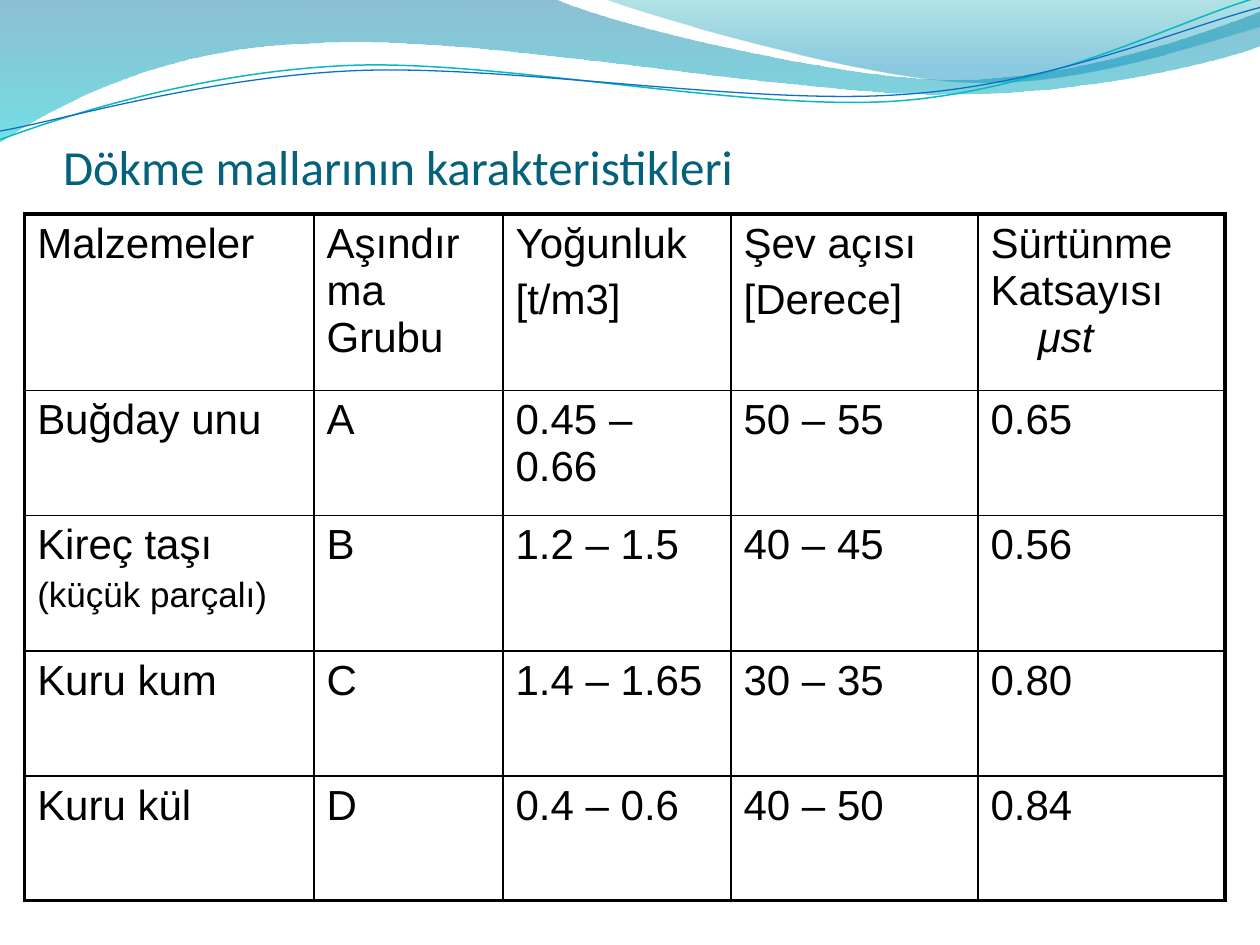
import dataclasses

import lxml.etree
import pptx
import pptx.dml.color
import pptx.enum.text
import pptx.oxml.ns
import pptx.util

Pt = pptx.util.Pt
qn = pptx.oxml.ns.qn


@dataclasses.dataclass(frozen=True)
class Theme:
    heading_font: str = "Calibri"
    body_font: str = "Arial"
    title_size: int = 28
    body_size: int = 24
    note_size: int = 20
    title: str = "04617B"
    ink: str = "000000"
    wave_lines: tuple = (("0AB8BF", 0.85), ("0F6FC6", 0.75))
    # Each stop: position, colour, opacity in percent
    wave_fills: tuple = (
        ((0, "0074A1", 45), (1, "00C6CF", 55)),
        ((0, "00A1A9", 30), (0.8, "008BBF", 45)),
    )


theme = Theme()
rgb = pptx.dml.color.RGBColor.from_string


def write(para, text, font=theme.body_font, size=theme.body_size,
          color=theme.ink, italic=False, before=0):
    """Add formatted text to a paragraph."""
    para.space_before = Pt(before)
    span = para.add_run()
    span.text = text
    span.font.name = font
    span.font.size = Pt(size)
    span.font.bold = False
    span.font.italic = italic
    span.font.color.rgb = rgb(color)


def draw_path(page, start, steps, close):
    """Draw lines (x, y) and Bezier curves (two controls and an end)."""
    builder = page.shapes.build_freeform(Pt(start[0]), Pt(start[1]))
    builder.add_line_segments([(Pt(x), Pt(y)) for *_, x, y in steps], close=close)
    shape = builder.convert_to_shape()
    shape.shadow.inherit = False
    # Turn the straight segments of curved steps into Bezier curves
    segments = list(shape._element.iter(qn("a:lnTo")))
    for segment, step in zip(segments, steps):
        if len(step) == 6:
            segment.tag = qn("a:cubicBezTo")
            for i, (x, y) in enumerate((step[:2], step[2:4])):
                control = lxml.etree.Element(
                    qn("a:pt"), x=str(Pt(x) - shape.left), y=str(Pt(y) - shape.top))
                segment.insert(i, control)
    return shape


deck = pptx.Presentation()
deck.slide_width, deck.slide_height = Pt(720), Pt(540)
page = deck.slides.add_slide(deck.slide_layouts[5])

# Filled waves along the top
wave_bands = [
    ((0, 0), [(316.8, -0.7),
              (342.7, 12.2, 478.1, 45.4, 545.8, 45.4),
              (614.2, 45.4, 689.8, 18.7, 720, 6.5),
              (720.7, 25.9),
              (707.8, 31.7, 626.4, 54.7, 537.1, 54),
              (447.8, 54, 275, 20.2, 185, 24.5),
              (92.9, 25.9, 33.1, 59.8, -0.7, 81.4)]),
    ((344.9, -0.7), [(366.5, 7.9, 491, 44.6, 553.7, 46.8),
                     (616.3, 49.7, 691.9, 23, 720, 15.1),
                     (720, 0)]),
]
for (start, steps), stops in zip(wave_bands, theme.wave_fills):
    band = draw_path(page, start, steps, close=True)
    band.line.fill.background()
    band.fill.gradient()
    band.fill.gradient_angle = 270
    for stop, (position, color, _) in zip(band.fill.gradient_stops, stops):
        stop.position = position
        stop.color.rgb = rgb(color)
    colors = list(band._element.spPr.iter(qn("a:srgbClr")))
    for node, (_, _, opacity) in zip(colors, stops):
        lxml.etree.SubElement(node, qn("a:alpha"), val=str(opacity * 1000))

# Thin wave lines, slightly turned
wave_curves = [
    ((-1.4, 62.9), [(33.7, 51.6, 114, 29.4, 199.8, 29.9),
                    (284.8, 30.3, 425.8, 67.2, 512.4, 64.9),
                    (599, 62.4, 676.4, 25.7, 720, 15.6)]),
    ((-1.2, 57.9), [(33, 53.7, 118.3, 32.5, 204, 33),
                    (290.5, 33.5, 428.9, 63.8, 515.5, 61.3),
                    (601.3, 59.7, 678.5, 30.1, 721.4, 21.3)]),
]
for (start, steps), (color, width) in zip(wave_curves, theme.wave_lines):
    curve = draw_path(page, start, steps, close=False)
    curve.rotation = 357.3
    curve.fill.background()
    curve.line.color.rgb = rgb(color)
    curve.line.width = Pt(width)

# Title, in front of the waves
title = page.shapes.title
page.shapes._spTree.append(title._element)
title.left, title.top, title.width, title.height = Pt(36), Pt(21.6), Pt(648), Pt(90)
frame = title.text_frame
frame.margin_left = frame.margin_right = frame.margin_bottom = 0
frame.margin_top = Pt(3.6)
frame.word_wrap = True
frame.auto_size = pptx.enum.text.MSO_AUTO_SIZE.NONE
frame.vertical_anchor = pptx.enum.text.MSO_ANCHOR.BOTTOM
frame.paragraphs[0].alignment = pptx.enum.text.PP_ALIGN.LEFT
write(frame.paragraphs[0], "Dökme mallarının karakteristikleri",
      font=theme.heading_font, size=theme.title_size, color=theme.title)

# Table of materials; a line break in a cell starts a new paragraph
rows = [
    ("Malzemeler", "Aşındırma Grubu", "Yoğunluk\n[t/m3]", "Şev açısı\n[Derece]",
     "Sürtünme Katsayısı\nμst"),
    ("Buğday unu", "A", "0.45 – 0.66", "50 – 55", "0.65"),
    ("Kireç taşı\n(küçük parçalı)", "B", "1.2 – 1.5", "40 – 45", "0.56"),
    ("Kuru kum", "C", "1.4 – 1.65", "30 – 35", "0.80"),
    ("Kuru kül", "D", "0.4 – 0.6", "40 – 50", "0.84"),
]
special_formats = {
    "μst": dict(italic=True),
    "(küçük parçalı)": dict(size=theme.note_size, before=4),
}
column_widths = [165.4, 108, 130.3, 141.1, 141.1]
row_heights = [100.8, 71.3, 77.6, 71.3, 71.3]
table = page.shapes.add_table(
    len(rows), len(column_widths), Pt(14.1), Pt(122.4),
    Pt(sum(column_widths)), Pt(sum(row_heights))).table
table.first_row = table.horz_banding = False
for column, width in zip(table.columns, column_widths):
    column.width = Pt(width)
for row, height in zip(table.rows, row_heights):
    row.height = Pt(height)

for r, texts in enumerate(rows):
    for c, text in enumerate(texts):
        cell = table.cell(r, c)
        frame = cell.text_frame
        for i, line in enumerate(text.split("\n")):
            para = frame.add_paragraph() if i else frame.paragraphs[0]
            if line == "μst":
                para._p.get_or_add_pPr().set("marL", str(Pt(27)))
            write(para, line, **special_formats.get(line, dict(before=5.3 if i else 0)))

        # Heavy outer frame, thin inner rules
        outer_sides = {"L": c == 0, "R": c == len(texts) - 1,
                       "T": r == 0, "B": r == len(rows) - 1}
        properties = cell._tc.get_or_add_tcPr()
        for side, outer in outer_sides.items():
            border = lxml.etree.SubElement(
                properties, qn(f"a:ln{side}"), w=str(Pt(2.25 if outer else 1)))
            fill = lxml.etree.SubElement(border, qn("a:solidFill"))
            lxml.etree.SubElement(fill, qn("a:srgbClr"), val=theme.ink)
        cell.fill.background()

deck.save("out.pptx")
